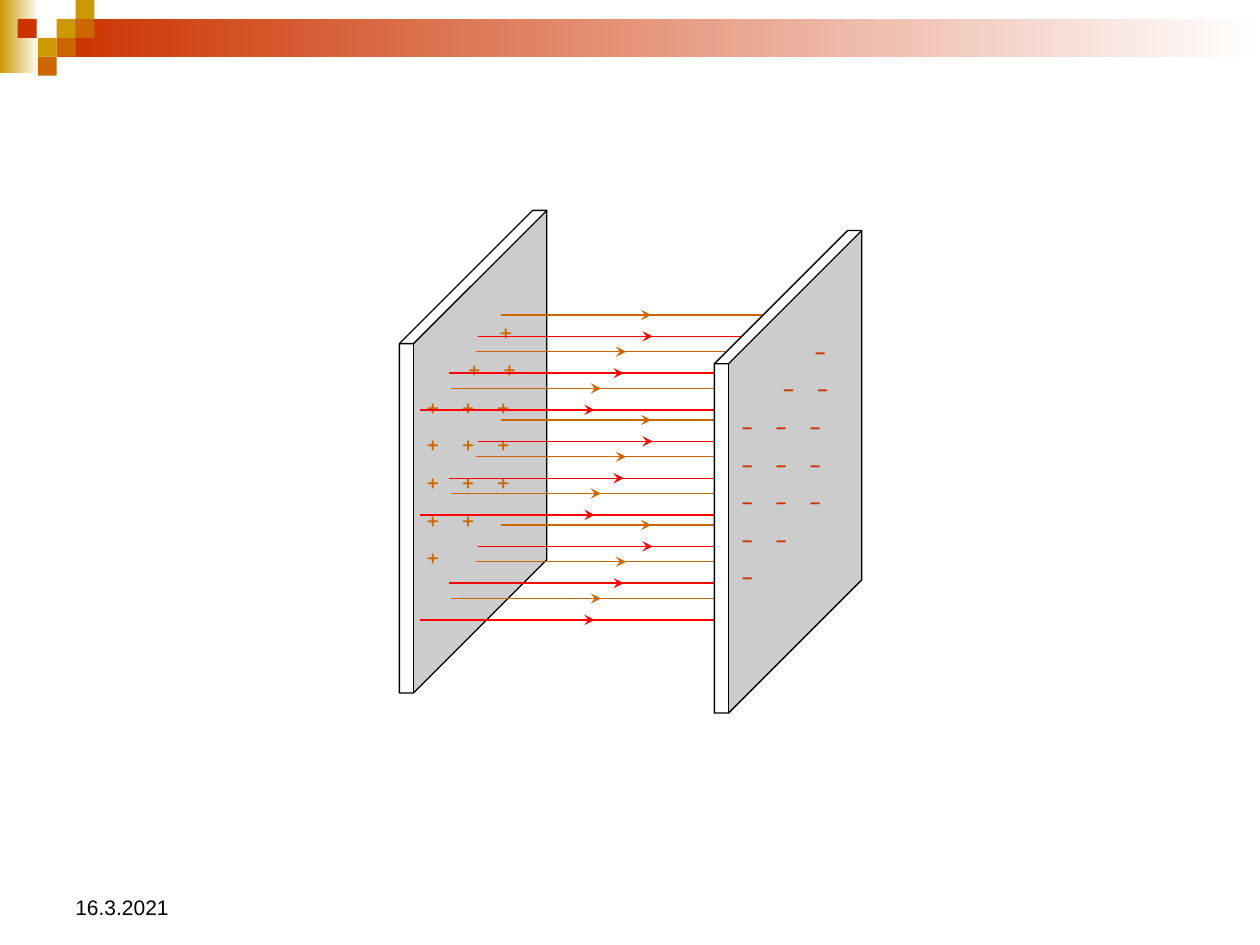
import pptx
import pptx.util
import pptx.dml.color
import pptx.enum.shapes
import pptx.enum.text
import pptx.oxml.ns
from lxml import etree

Inches = pptx.util.Inches
Pt = pptx.util.Pt
SHAPES = pptx.enum.shapes.MSO_SHAPE
ANCHOR = pptx.enum.text.MSO_ANCHOR

COLORS = {
    "gold": "CC9900",
    "orange": "CC6600",
    "rust": "CC3300",
    "red": "FF0000",
    "white": "FFFFFF",
    "black": "000000",
}


class FieldSlide:
    line_width = Pt(0.75)
    body_font = "Arial"
    charge_font = "Comic Neue"

    def __init__(self, slide):
        self.slide = slide

    def color(self, name):
        return pptx.dml.color.RGBColor.from_string(COLORS[name])

    def child(self, parent, tag, **attributes):
        return etree.SubElement(parent, pptx.oxml.ns.qn(tag), attributes)

    def shape(self, kind, left, top, width, height):
        shape = self.slide.shapes.add_shape(
            kind, Inches(left), Inches(top), Inches(width), Inches(height))
        shape.shadow.inherit = False
        return shape

    def tile(self, left, top, fill, width=0.15, height=0.15, fade=False):
        tile = self.shape(SHAPES.RECTANGLE, left, top, width, height)
        tile.line.fill.background()
        if fade:
            tile.fill.gradient()
            tile.fill.gradient_angle = 0
            for stop, name, position in zip(tile.fill.gradient_stops, (fill, "white"), (0, 1)):
                stop.color.rgb = self.color(name)
                stop.position = position
        else:
            tile.fill.solid()
            tile.fill.fore_color.rgb = self.color(fill)

    def plate(self, left, top):
        plate = self.shape(SHAPES.CUBE, left, top, 1.17, 3.83)
        plate.adjustments[0] = 0.904
        plate.fill.solid()
        plate.fill.fore_color.rgb = self.color("white")
        plate.line.color.rgb = self.color("black")
        plate.line.width = self.line_width

    def line(self, start, end, y, color, arrow=False):
        line = self.slide.shapes.add_connector(
            pptx.enum.shapes.MSO_CONNECTOR.STRAIGHT,
            Inches(start), Inches(y), Inches(end), Inches(y))
        line.line.color.rgb = self.color(color)
        line.line.width = self.line_width
        if arrow:
            self.child(line.line._get_or_add_ln(), "a:tailEnd", type="stealth")
        self.child(line._element.spPr, "a:effectLst")

    def field_lines(self, left, top, shift, length, overlap, color):
        for block in reversed(range(3)):
            for row in range(3):
                start = left - shift * row
                y = top + block * 5 / 6 + row * 7 / 24
                second = start + length - overlap
                self.line(start, start + length, y, color, arrow=True)
                self.line(second, second + length, y, color)

    def text_box(self, left, top, width, height, anchor):
        box = self.slide.shapes.add_textbox(
            Inches(left), Inches(top), Inches(width), Inches(height))
        box.text_frame.word_wrap = True
        box.text_frame.vertical_anchor = anchor
        return box.text_frame

    def style_font(self, paragraph, name, size, color):
        for run in paragraph.runs:
            run.font.name = name
            run.font.size = Pt(size)
            run.font.color.rgb = self.color(color)

    def date(self, text):
        frame = self.text_box(0.5, 6.83, 2.33, 0.52, ANCHOR.BOTTOM)
        frame.text = text
        self.style_font(frame.paragraphs[0], self.body_font, 12, "black")

    def charges(self, sign, left, top, step, color):
        frame = self.text_box(left, top, 1.1, 2.1, ANCHOR.TOP)
        frame.margin_left = frame.margin_right = 0
        frame.margin_top = frame.margin_bottom = 0
        rows = [(0.58, 1), (0.33, 2), (0, 3), (0, 3), (0, 3), (0, 2), (0, 1)]
        for index, (indent, count) in enumerate(rows):
            paragraph = frame.add_paragraph() if index else frame.paragraphs[0]
            paragraph.text = ("\t" if indent else "") + "\t".join([sign] * count)
            paragraph.line_spacing = Pt(21.5)
            stops = [indent + step * column for column in range(count)]
            tabs = self.child(paragraph._p.get_or_add_pPr(), "a:tabLst")
            for stop in filter(None, stops):
                self.child(tabs, "a:tab", pos=str(Inches(stop)), algn="l")
            self.style_font(paragraph, self.charge_font, 18, color)


def main():
    presentation = pptx.Presentation()
    presentation.slide_width = Inches(10)
    presentation.slide_height = Inches(7.5)
    field = FieldSlide(presentation.slides.add_slide(presentation.slide_layouts[6]))

    field.tile(0, 0, "gold", 0.31, 0.58, fade=True)
    field.tile(0.45, 0.15, "rust", 9.55, 0.3, fade=True)
    for left, top, fill in [
        (0.45, 0.15, "gold"), (0.6, 0, "gold"), (0.6, 0.15, "orange"),
        (0.3, 0.3, "gold"), (0.14, 0.15, "rust"),
        (0.45, 0.3, "orange"), (0.3, 0.45, "orange"),
    ]:
        field.tile(left, top, fill)

    field.date("16.3.2021")
    field.plate(3.17, 1.67)
    field.charges("+", 3.38, 2.46, 0.28, "orange")
    field.field_lines(3.98, 2.5, 0.2, 1.19, 0.2, "orange")
    field.field_lines(3.79, 2.67, 0.23, 1.39, 0.23, "red")
    field.plate(5.67, 1.83)
    field.charges("-", 5.88, 2.62, 0.27, "rust")
    presentation.save("out.pptx")


if __name__ == "__main__":
    main()
